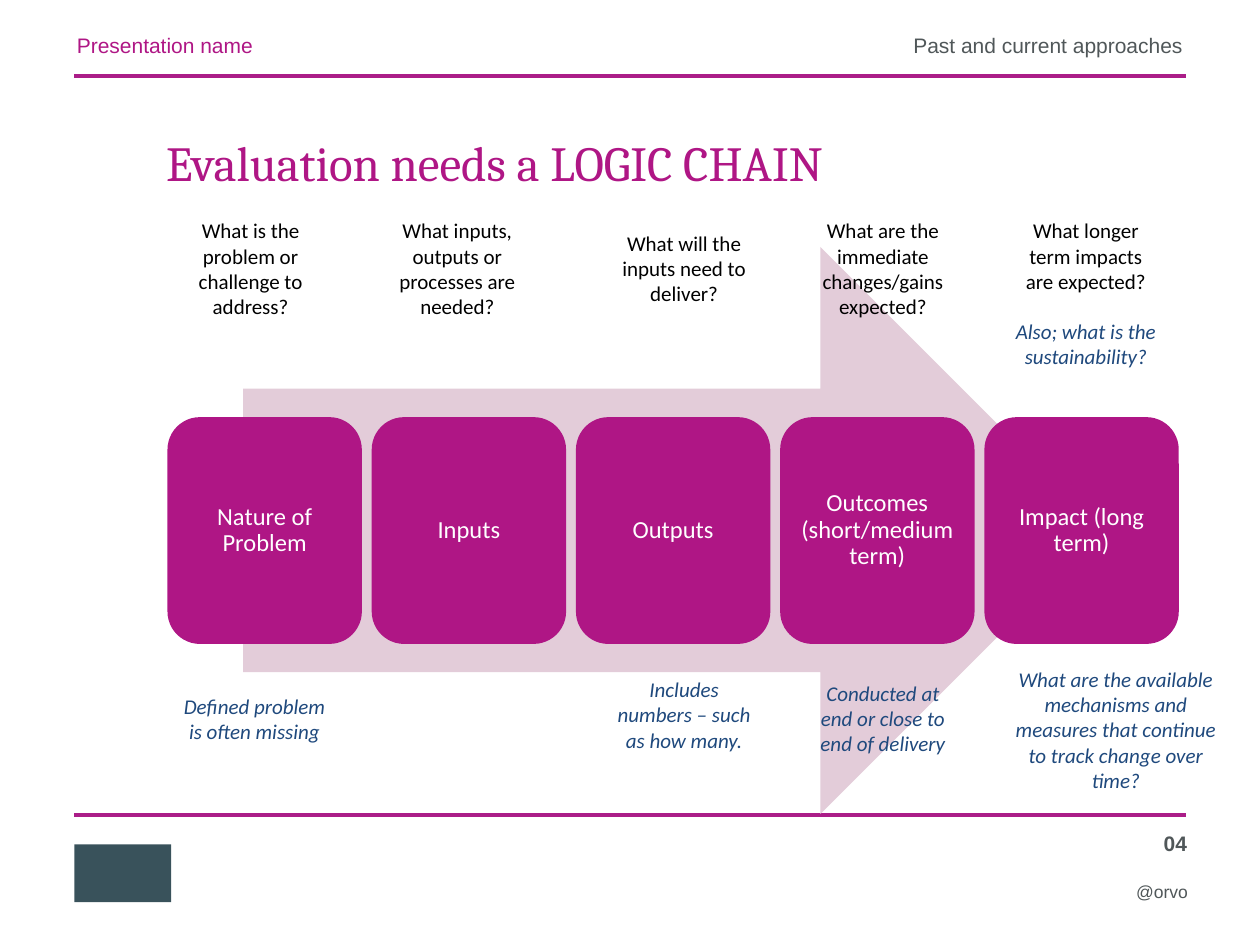
from pptx import Presentation
from pptx.dml.color import RGBColor
from pptx.enum.shapes import MSO_CONNECTOR, MSO_SHAPE
from pptx.enum.text import MSO_ANCHOR, MSO_AUTO_SIZE, PP_ALIGN
from pptx.oxml.ns import qn
from pptx.util import Pt

HUES = {"plum": "AF1685", "rule": "AB1D88", "pale": "E3CCD9", "slate": "39525B",
        "grey": "505759", "navy": "1F497D", "black": "000000", "white": "FFFFFF"}

TITLE = "Evaluation needs a LOGIC CHAIN"
HEADS = [
    (1, "Presentation name", (36.7, 15.1, 311.8, 17.3), PP_ALIGN.LEFT, "plum", False),
    (3, "Past and current approaches", (354.2, 15.1, 329, 17.3), PP_ALIGN.RIGHT, "grey", False),
    (2, "04", (614.9, 470.9, 70.6, 20.9), PP_ALIGN.RIGHT, "grey", True),
]
HANDLE = "@orvo"
STEPS = ["Nature of Problem", "Inputs", "Outputs",
         "Outcomes (short/medium term)", "Impact (long term)"]
ASK, TIP = ("black", False), ("navy", True)
NOTES = [
    ((95, 121, 96.5, 65.5), [("What is the problem or challenge to address?", ASK)]),
    ((213.1, 121, 96.5, 65.5), [("What inputs, outputs or processes are needed?", ASK)]),
    ((342.7, 128.2, 96.5, 51.1), [("What will the inputs need to deliver?", ASK)]),
    ((456.3, 121, 96.5, 65.5), [("What are the immediate changes/gains expected?", ASK)]),
    ((572.3, 121, 96.5, 94.3), [("What longer term impacts are expected?", ASK),
                                ("Also; what is the sustainability?", TIP)]),
    ((97.2, 392.6, 96.5, 36.7), [("Defined problem is often missing", TIP)]),
    ((342.7, 383.2, 96.5, 51.1), [("Includes numbers – such as how many.", TIP)]),
    ((456.3, 385.2, 96.5, 51.1), [("Conducted at end or close to end of delivery", TIP)]),
    ((571, 377.3, 133.2, 79.9), [("What are the available mechanisms and measures that "
                                  "continue to track change over time?", TIP)]),
]
RULES = [43.3, 465.8]
EDGES = (42.5, 677.5)
CARD = (95.7, 238.4, 111.1, 129.6)
PITCH = 116.7


def tint(hue):
    return RGBColor.from_string(HUES[hue])


def place(shape, box):
    shape.left, shape.top, shape.width, shape.height = map(Pt, box)


def write(para, text, size, face, hue, bold=False, slant=False):
    run = para.add_run()
    run.text = text
    font = run.font
    font.size, font.name, font.bold, font.italic = Pt(size), face, bold, slant
    font.color.rgb = tint(hue)


def block(kind, box, hue):
    shape = slide.shapes.add_shape(kind, *map(Pt, box))
    shape.shadow.inherit = False
    shape.fill.solid()
    shape.fill.fore_color.rgb = tint(hue)
    shape.line.fill.background()
    return shape


def label(box):
    frame = slide.shapes.add_textbox(*map(Pt, box)).text_frame
    frame.word_wrap = True
    return frame


deck = Presentation()
deck.slide_width, deck.slide_height = Pt(720), Pt(540)
slide = deck.slides.add_slide(deck.slide_layouts[4])
slots = {slot.placeholder_format.idx: slot for slot in slide.placeholders}

title = slide.shapes.title
place(title, (87.8, 64.1, 549.4, 56.9))
frame = title.text_frame
frame.auto_size = MSO_AUTO_SIZE.NONE
frame.vertical_anchor = MSO_ANCHOR.MIDDLE
frame.paragraphs[0].alignment = PP_ALIGN.LEFT
write(frame.paragraphs[0], TITLE, 28, "Cambria", "plum")

for idx, text, box, align, hue, bold in HEADS:
    place(slots[idx], box)
    frame = slots[idx].text_frame
    frame.auto_size = MSO_AUTO_SIZE.NONE
    frame.vertical_anchor = MSO_ANCHOR.TOP
    para = frame.paragraphs[0]
    props = para._p.get_or_add_pPr()
    props.set("marL", "0")
    props.set("indent", "0")
    props.append(props.makeelement(qn("a:buNone"), {}))
    para.alignment = align
    para.space_before = Pt(0)
    write(para, text, 12, "Arial", hue, bold)

spare = slots[4].element
spare.getparent().remove(spare)

block(MSO_SHAPE.RECTANGLE, (42.5, 482.6, 55.4, 33), "slate")
for y in RULES:
    rule = slide.shapes.add_connector(
        MSO_CONNECTOR.STRAIGHT, Pt(EDGES[0]), Pt(y), Pt(EDGES[1]), Pt(y))
    rule.line.color.rgb = tint("rule")
    rule.line.width = Pt(2)
    props = rule._element.spPr
    props.append(props.makeelement(qn("a:effectLst"), {}))

write(label((642.2, 499.7, 51.1, 22.3)).paragraphs[0], HANDLE, 10, "Arial", "grey")

block(MSO_SHAPE.RIGHT_ARROW, (139, 141.1, 491.8, 324), "pale")
left, top, wide, high = CARD
for col, text in enumerate(STEPS):
    card = block(MSO_SHAPE.ROUNDED_RECTANGLE, (left + col * PITCH, top, wide, high), "plum")
    frame = card.text_frame
    frame.word_wrap = True
    frame.vertical_anchor = MSO_ANCHOR.MIDDLE
    frame.margin_left = frame.margin_right = Pt(4.2)
    frame.margin_top = frame.margin_bottom = Pt(4.2)
    para = frame.paragraphs[0]
    para.alignment = PP_ALIGN.CENTER
    para.line_spacing = 0.9
    write(para, text, 14, "Calibri", "white")

for box, lines in NOTES:
    frame = label(box)
    for row, (text, (hue, slant)) in enumerate(lines):
        para = frame.add_paragraph() if row else frame.paragraphs[0]
        para.alignment = PP_ALIGN.CENTER
        para.space_before = Pt(14.4 * row)
        write(para, text, 12, "Calibri", hue, slant=slant)

deck.save("out.pptx")
